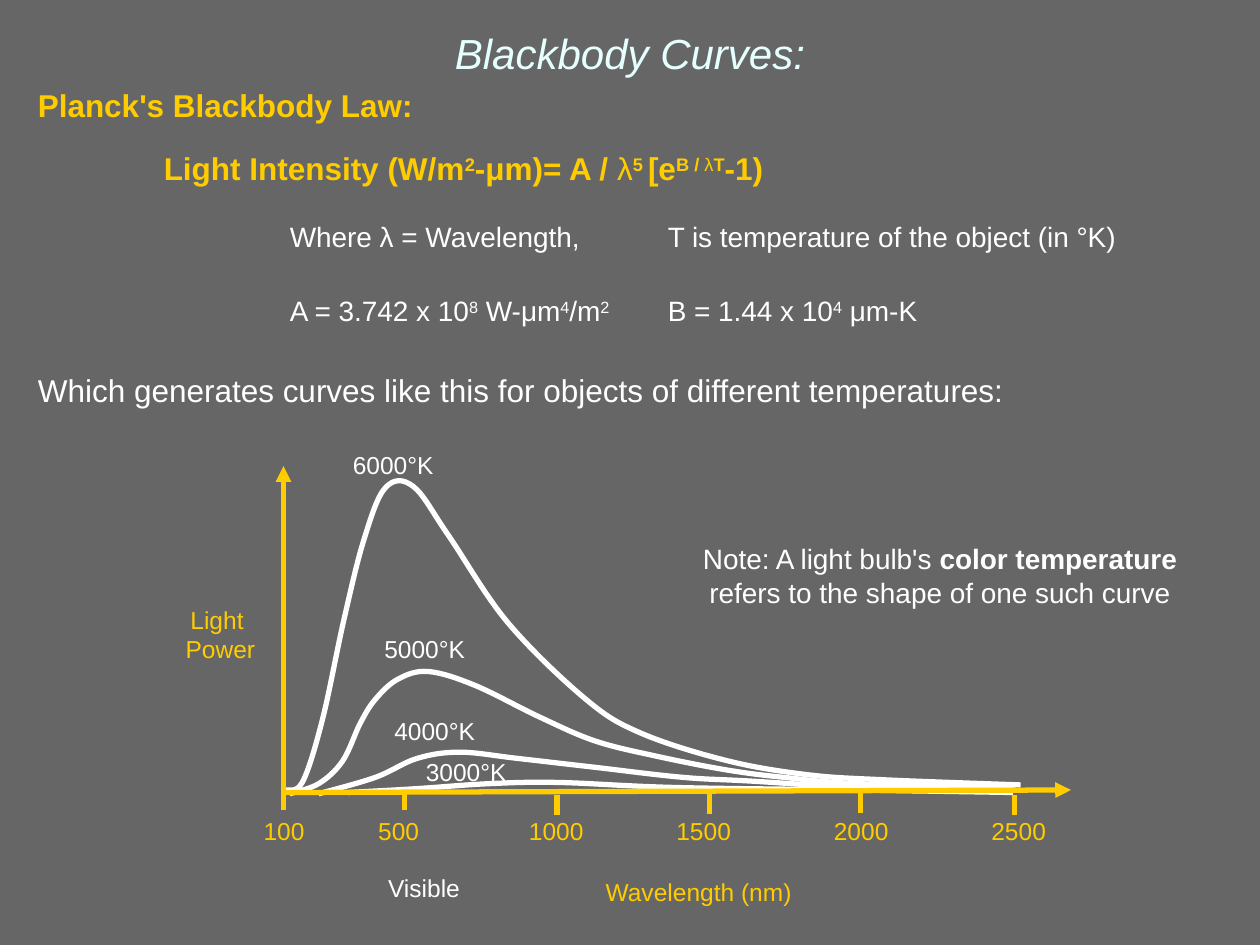
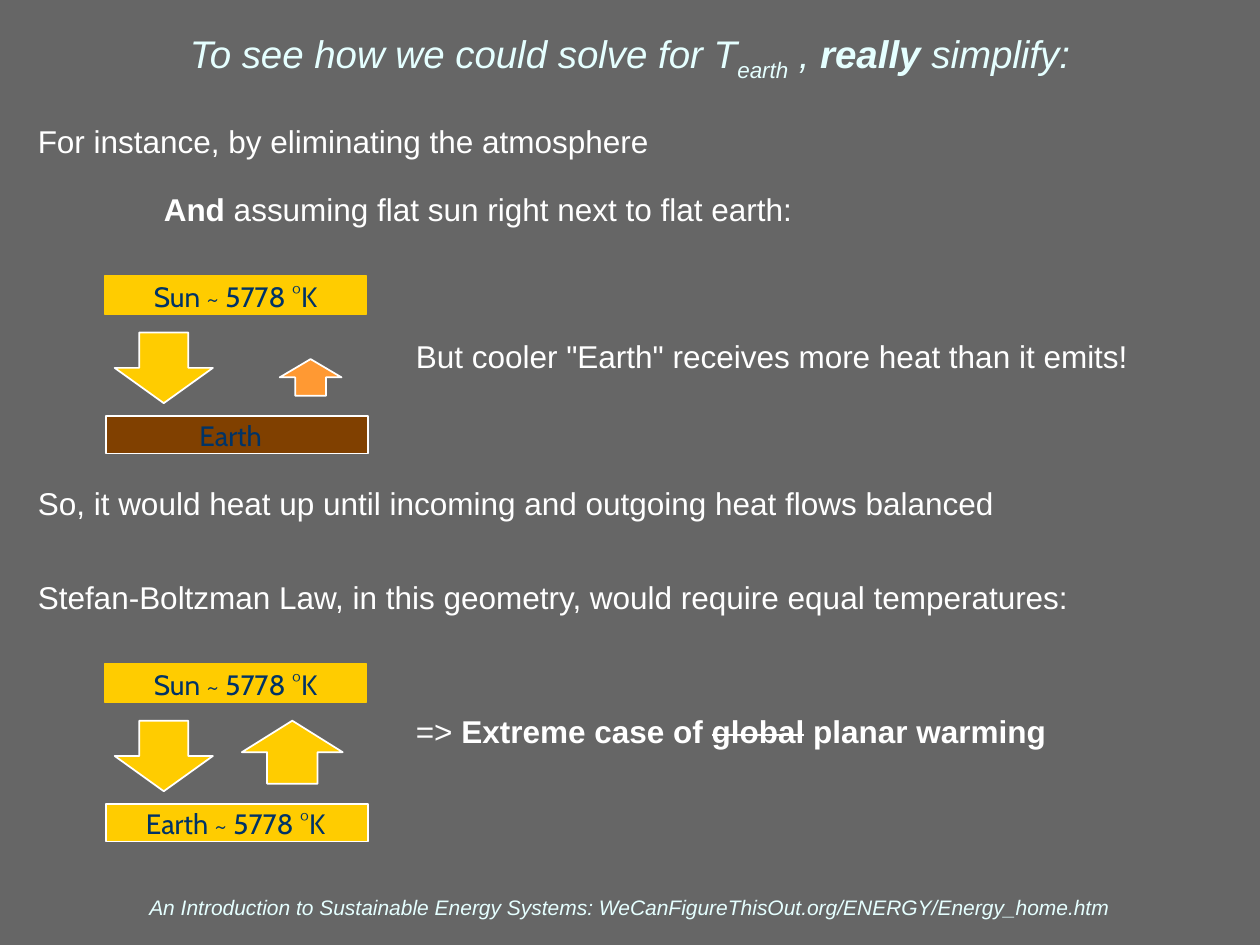
from lxml.etree import SubElement
from pptx import Presentation
from pptx.dml.color import RGBColor
from pptx.enum.shapes import MSO_CONNECTOR, MSO_SHAPE
from pptx.enum.text import MSO_ANCHOR, MSO_AUTO_SIZE, PP_ALIGN
from pptx.oxml.ns import qn
from pptx.util import Inches, Pt

GRAY = RGBColor(0x66, 0x66, 0x66)
WHITE = RGBColor(0xFF, 0xFF, 0xFF)
ICE = RGBColor(0xE5, 0xFF, 0xFF)
YELLOW = RGBColor(0xFF, 0xCC, 0x00)
ORANGE = RGBColor(0xFF, 0x99, 0x33)
BROWN = RGBColor(0x80, 0x40, 0x00)
NAVY = RGBColor(0x00, 0x33, 0x66)

BOLD = {"bold": True}
SUPER = {"baseline": "30000"}
SUB = {"baseline": "-25000"}
STRIKE = {"bold": True, "strike": "sngStrike"}
LAW = {"bold": True, "color": YELLOW}
LAW_SUPER = {**LAW, **SUPER}
LAMBDA = {"color": YELLOW}
SMALL = {"size": 16}
SMALL_SUPER = {**SMALL, **SUPER}

TITLE_FORMAT = {"size": 24, "color": ICE, "italic": True}
BODY_FORMAT = {"size": 18, "color": WHITE}
LABEL_FORMAT = {"size": 14, "color": WHITE}
AXIS_FORMAT = {"size": 14, "color": YELLOW}
BLOCK_FORMAT = {"size": 16, "color": NAVY, "name": "Cabin"}
FOOTER_FORMAT = {"size": 12, "color": ICE, "italic": True}

# Paragraphs: (space before in points, runs); runs: (text, format)
PLANCK_TEXT = [
    (0, [("Planck's Blackbody Law:", LAW)]),
    (16.5, [("\tLight Intensity (W/m", LAW), ("2", LAW_SUPER), ("-μm)= A / ", LAW),
            ("λ", LAMBDA), ("5 ", LAW_SUPER), ("[e", LAW), ("B / ", LAW_SUPER),
            ("λ", {**LAMBDA, **SUPER}), ("T", LAW_SUPER), ("-1)", LAW)]),
    (20.5, [("\t\tWhere λ = Wavelength, \tT is temperature of the object (in °K)", SMALL)]),
    (25.2, [("\t\tA = 3.742 x 10", SMALL), ("8", SMALL_SUPER), (" W-μm", SMALL),
            ("4", SMALL_SUPER), ("/m", SMALL), ("2", SMALL_SUPER),
            ("\tB = 1.44 x 10", SMALL), ("4", SMALL_SUPER), (" μm-K", SMALL)]),
    (27, [("Which generates curves like this for objects of different temperatures:", {})]),
]
NOTE = [(0, [("Note: A light bulb's ", {}), ("color temperature ", BOLD),
             ("refers to the shape of one such curve", {})])]

# Points each smooth temperature curve passes through
CURVES = [
    [(2.3, 6.3), (2.53, 6.22), (2.72, 6.04), (2.86, 5.74), (2.98, 5.55), (3.16, 5.39),
     (3.4, 5.33), (3.77, 5.44), (4.28, 5.69), (4.72, 5.88), (5.2, 6), (5.76, 6.11),
     (6.22, 6.17), (6.81, 6.22), (8.04, 6.25)],
    [(2.53, 6.3), (2.98, 6.17), (3.31, 6.02), (3.65, 5.97), (4.11, 6.02), (4.72, 6.09),
     (5.42, 6.17), (5.97, 6.2), (6.99, 6.26), (8.06, 6.27)],
    [(2.76, 6.29), (3.3, 6.26), (3.88, 6.22), (4.43, 6.21), (5.35, 6.25), (6.78, 6.27),
     (8.04, 6.29)],
    [(2.26, 6.27), (2.4, 6.21), (2.56, 5.71), (2.73, 4.92), (2.89, 4.28), (3.06, 3.87),
     (3.28, 3.86), (3.56, 4.25), (4.03, 4.94), (4.65, 5.55), (5.09, 5.82), (5.78, 6.04),
     (6.42, 6.15), (7.03, 6.19), (8.1, 6.23)],
]
CURVE_LABELS = [("6000°K", 2.75, 3.52), ("5000°K", 3, 4.98),
                ("4000°K", 3.08, 5.63), ("3000°K", 3.33, 5.96)]
# Label, tick x, tick top, label left
TICKS = [("100", 2.25, 6.27, 1.92), ("500", 3.21, 6.27, 2.83), ("1000", 4.42, 6.31, 4.08),
         ("1500", 5.63, 6.3, 5.25), ("2000", 6.83, 6.29, 6.5), ("2500", 8.05, 6.31, 7.75)]
AXES = [((2.25, 6.27), (2.25, 3.7)), ((2.24, 6.29), (8.5, 6.27))]

SIMPLE_TITLE = [("To see how we could solve for T", {}), ("earth", SUB), (" , ", {}),
                ("really", BOLD), (" simplify:", {})]
SIMPLE_TEXT = [
    (0, [("For instance, by eliminating the atmosphere", {})]),
    (17.4, [("\tAnd", BOLD), (" assuming flat sun right next to flat earth:", {})]),
    (62.4, [("\t\t\tBut cooler \"Earth\" receives more heat than it emits!", {})]),
    (62.4, [("So, it would heat up until incoming and outgoing heat flows balanced", {})]),
    (32, [("Stefan-Boltzman Law, in this geometry, would require equal temperatures:", {})]),
    (54.9, [("\t\t\t=> ", {}), ("Extreme case of ", BOLD), ("global", STRIKE),
            (" planar warming", BOLD)]),
]
FOOTER = ("An Introduction to Sustainable Energy Systems: "
          "WeCanFigureThisOut.org/ENERGY/Energy_home.htm")

# Top, earth label with its left and width, earth fill, return arrow box and fill
DIAGRAMS = [
    (2.19, ("Earth", 1.17, 1.32), BROWN, (2.22, 0.66, 0.49, 0.29), ORANGE),
    (5.27, ("Earth ~ 5778 °K", 0.83, 2.08), YELLOW, (1.92, 0.45, 0.8, 0.5), YELLOW),
]


def inches(values):
    return [Inches(value) for value in values]


def plain(text):
    return [(0, [(text, {})])]


def write(shape, paragraphs, base, align=PP_ALIGN.LEFT, anchor=MSO_ANCHOR.TOP,
          line_spacing=None):
    frame = shape.text_frame
    settings = {"word_wrap": True, "auto_size": MSO_AUTO_SIZE.NONE, "vertical_anchor": anchor}
    settings.update({f"margin_{side}": Inches(0.05)
                     for side in ("left", "top", "right", "bottom")})
    for name, value in settings.items():
        setattr(frame, name, value)
    for index, (space, runs) in enumerate(paragraphs):
        paragraph = frame.add_paragraph() if index else frame.paragraphs[0]
        paragraph.alignment = align
        paragraph.space_before = Pt(space)
        if line_spacing:
            paragraph.line_spacing = line_spacing
        if any("\t" in text for text, _ in runs):
            add_tab_stops(paragraph)
        for text, changes in runs:
            run = paragraph.add_run()
            run.text = text
            format_run(run, {"name": "Arial", "bold": False, **base, **changes})


def add_tab_stops(paragraph):
    """Put a tab stop at every inch."""
    tabs = SubElement(paragraph._p.get_or_add_pPr(), qn("a:tabLst"))
    for stop in range(1, 6):
        SubElement(tabs, qn("a:tab"), pos=str(Inches(stop)), algn="l")


def format_run(run, values):
    for name, value in values.items():
        if name == "color":
            run.font.color.rgb = value
        elif name == "size":
            run.font.size = Pt(value)
        elif name in ("baseline", "strike"):
            run.font._element.set(name, value)
        else:
            setattr(run.font, name, value)


def add_text(slide, box, paragraphs, base, **options):
    write(slide.shapes.add_textbox(*inches(box)), paragraphs, base, **options)


def add_slide(presentation, title_box, runs, size):
    slide = presentation.slides.add_slide(presentation.slide_layouts[5])
    title = slide.shapes.title
    title.left, title.top, title.width, title.height = inches(title_box)
    write(title, [(0, runs)], {**TITLE_FORMAT, "size": size},
          align=PP_ALIGN.CENTER, anchor=MSO_ANCHOR.MIDDLE)
    return slide


def add_line(slide, start, end, arrow=False):
    line = slide.shapes.add_connector(MSO_CONNECTOR.STRAIGHT, *inches(start + end))
    line.line.color.rgb = YELLOW
    line.line.width = Pt(3)
    if arrow:
        SubElement(line.line._get_or_add_ln(), qn("a:tailEnd"), type="triangle")
    SubElement(line._element.spPr, qn("a:effectLst"))


def bend_segments(curve, points):
    """Turn the straight segments into Bezier curves, each tangent set by its neighbours."""
    local = [(Inches(x) - curve.left, Inches(y) - curve.top) for x, y in points]
    padded = [local[0], *local, local[-1]]
    segments = list(curve._element.iter(qn("a:lnTo")))
    for segment, a, b, c, d in zip(segments, padded, padded[1:], padded[2:], padded[3:]):
        first = [b[k] + (c[k] - a[k]) / 6 for k in (0, 1)]
        second = [c[k] - (d[k] - b[k]) / 6 for k in (0, 1)]
        segment.tag = qn("a:cubicBezTo")
        segment.remove(segment[0])
        for x, y in (first, second, c):
            SubElement(segment, qn("a:pt"), x=str(round(x)), y=str(round(y)))


def add_curve(slide, points):
    start, *rest = [inches(point) for point in points]
    builder = slide.shapes.build_freeform(*start)
    builder.add_line_segments(rest, close=False)
    curve = builder.convert_to_shape()
    bend_segments(curve, points)
    curve.shadow.inherit = False
    curve.fill.background()
    curve.line.color.rgb = WHITE
    curve.line.width = Pt(3)


def add_block(slide, kind, box, fill, line=WHITE):
    shape = slide.shapes.add_shape(kind, *inches(box))
    shape.shadow.inherit = False
    shape.fill.solid()
    shape.fill.fore_color.rgb = fill
    shape.line.color.rgb = line
    shape.line.width = Pt(1)


def add_diagram(slide, top, earth, earth_fill, return_box, return_fill):
    left, offset, width, height = return_box
    earth_label, earth_left, earth_width = earth
    add_block(slide, MSO_SHAPE.DOWN_ARROW, (0.91, top + 0.45, 0.78, 0.56), YELLOW)
    add_block(slide, MSO_SHAPE.UP_ARROW, (left, top + offset, width, height), return_fill)
    add_block(slide, MSO_SHAPE.RECTANGLE, (0.84, top + 1.11, 2.08, 0.3), earth_fill)
    add_text(slide, (earth_left, top + 1.08, earth_width, 0.36), plain(earth_label),
             BLOCK_FORMAT, align=PP_ALIGN.CENTER)
    add_block(slide, MSO_SHAPE.RECTANGLE, (0.83, top, 2.08, 0.3), YELLOW, YELLOW)
    add_text(slide, (0.83, top - 0.02, 2.08, 0.36), plain("Sun ~ 5778 °K"),
             BLOCK_FORMAT, align=PP_ALIGN.CENTER)


def build_curves_slide(presentation):
    slide = add_slide(presentation, (0.33, 0.08, 9.34, 0.67), [("Blackbody Curves:", {})], 24)
    add_text(slide, (0.25, 0.67, 9.58, 2.81), PLANCK_TEXT, BODY_FORMAT, line_spacing=0.9)
    for points in CURVES:
        add_curve(slide, points)
    for start, end in AXES:
        add_line(slide, start, end, arrow=True)
    for label, x, top, left in TICKS:
        add_line(slide, (x, top), (x, top + 0.16))
        add_text(slide, (left, 6.43, 0.67, 0.32), plain(label), AXIS_FORMAT,
                 align=PP_ALIGN.CENTER)
    for label, left, top in CURVE_LABELS:
        add_text(slide, (left, top, 1, 0.32), plain(label), LABEL_FORMAT)
    for box, paragraphs, base in (
        ((4.67, 6.91, 1.75, 0.32), plain("Wavelength (nm)"), AXIS_FORMAT),
        ((2.74, 6.88, 1.25, 0.32), plain("Visible"), LABEL_FORMAT),
        ((1.25, 4.75, 1, 0.54), plain("Light ") + plain("Power"), AXIS_FORMAT),
        ((5.25, 4.25, 4.42, 0.59), NOTE, {**LABEL_FORMAT, "size": 16}),
    ):
        add_text(slide, box, paragraphs, base, align=PP_ALIGN.CENTER)


def build_simple_slide(presentation):
    slide = add_slide(presentation, (0.33, 0.16, 9.34, 0.58), SIMPLE_TITLE, 22)
    add_text(slide, (0.33, 7.06, 9.34, 0.29), plain(FOOTER), FOOTER_FORMAT,
             align=PP_ALIGN.CENTER, anchor=MSO_ANCHOR.BOTTOM)
    add_text(slide, (0.25, 0.92, 9.58, 5.83), SIMPLE_TEXT, BODY_FORMAT)
    for diagram in DIAGRAMS:
        add_diagram(slide, *diagram)


def main():
    presentation = Presentation()
    presentation.slide_width, presentation.slide_height = inches((10, 7.5))
    background = presentation.slide_master.background.fill
    background.solid()
    background.fore_color.rgb = GRAY
    build_curves_slide(presentation)
    build_simple_slide(presentation)
    presentation.save("out.pptx")


if __name__ == "__main__":
    main()
